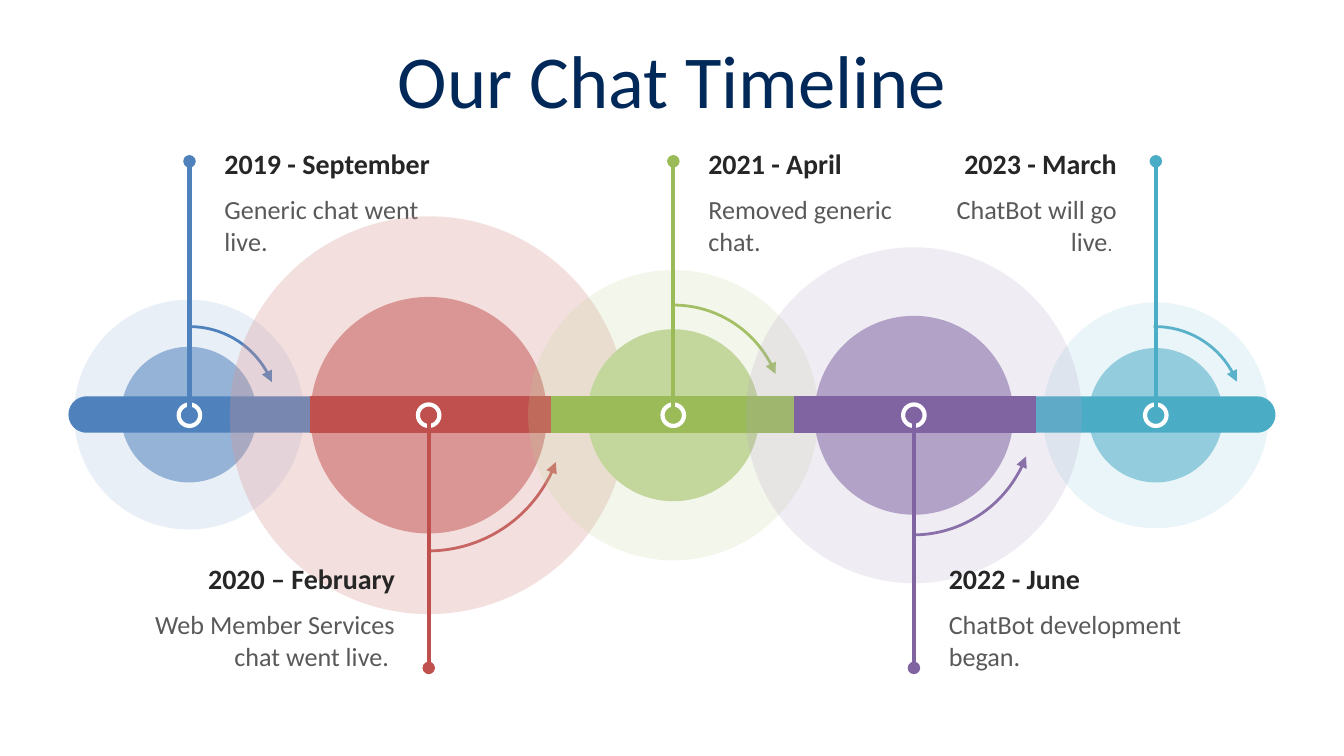
from dataclasses import dataclass, field
from math import cos, pi, sin

from lxml.etree import SubElement
from pptx import Presentation
from pptx.dml.color import RGBColor
from pptx.enum.shapes import MSO_CONNECTOR, MSO_SHAPE
from pptx.enum.text import MSO_ANCHOR, MSO_AUTO_SIZE, PP_ALIGN
from pptx.oxml.ns import qn
from pptx.util import Pt

SCALE = 9144
AXIS = 309
BAR_TOP, BAR_HEIGHT = 295, 27


@dataclass
class Theme:
    """Colours, type styles and line widths of the timeline."""
    white: str = "FFFFFF"
    ring_width: float = 2.25
    stem_width: float = 2.25
    arc_width: float = 1.5
    title: dict = field(default_factory=lambda: {"size": 40, "color": "002859"})
    heading: dict = field(default_factory=lambda: {"size": 15, "color": "262626", "bold": True})
    body: dict = field(default_factory=lambda: {"size": 14, "color": "595959"})
    small: dict = field(default_factory=lambda: {"size": 10.5, "color": "595959"})
    font: str = "Calibri"


@dataclass
class Stage:
    """One milestone on the bar."""
    heading: str
    body: str
    accent: str
    tint: str
    center: int
    halo: int
    disc: int
    arc: int
    bar: tuple
    text_left: int
    text_width: int
    above: bool = True
    align: PP_ALIGN = PP_ALIGN.LEFT
    opacity: int = 20
    round_left: bool = False
    round_right: bool = False
    small_end: str = ""


STAGES = [
    Stage("2019 - September", "Generic chat went live.", "4F81BD", "95B3D7",
          141, 171, 101, 132, (51, 231), 167, 171, round_left=True),
    Stage("2020 – February", "Web Member Services chat went live. ", "C0504D", "D99694",
          319, 296, 176, 203, (231, 410), 107, 187, above=False,
          align=PP_ALIGN.RIGHT, opacity=30),
    Stage("2023 - March", "ChatBot will go live", "4BACC6", "93CDDD",
          860, 168, 100, 131, (771, 949), 690, 141, align=PP_ALIGN.RIGHT,
          round_right=True, small_end=". "),
    Stage("2021 - April", "Removed generic chat.", "9BBB59", "C3D69B",
          501, 216, 128, 164, (410, 591), 527, 141),
    Stage("2022 - June", "ChatBot development began.", "8064A2", "B3A2C7",
          680, 250, 148, 179, (591, 771), 706, 187, above=False),
]


def px(*lengths):
    """Turn px lengths into EMU."""
    return [round(length * SCALE) for length in lengths]


def apply(target, values):
    """Set each attribute of the target from a dict."""
    for name, value in values.items():
        setattr(target, name, value)


class TimelinePage:
    """Draws timeline elements on the current slide."""

    def __init__(self, page, theme):
        self.page = page
        self.theme = theme

    def paint(self, shape, fill=None, line=None, width=0, opacity=100):
        """Fill and outline a shape and drop its shadow."""
        shape.shadow.inherit = False
        if fill:
            shape.fill.solid()
            shape.fill.fore_color.rgb = RGBColor.from_string(fill)
            if opacity < 100:
                color = next(shape._element.spPr.iter(qn("a:srgbClr")))
                SubElement(color, qn("a:alpha"), val=str(opacity * 1000))
        else:
            shape.fill.background()
        if line:
            self.stroke(shape, line, width)
        else:
            shape.line.fill.background()

    def stroke(self, shape, color, width):
        """Give a line its colour and width."""
        shape.line.color.rgb = RGBColor.from_string(color)
        shape.line.width = Pt(width)

    def line_end(self, shape, end, kind):
        """Put an end mark on a line."""
        SubElement(shape._element.spPr.find(qn("a:ln")), qn(f"a:{end}"), type=kind)

    def centered(self, preset, center, size):
        """Add a square preset shape centred on the axis."""
        box = px((2 * center - size) // 2, (2 * AXIS - size) // 2, size, size)
        return self.page.shapes.add_shape(preset, *box)

    def circle(self, center, size, fill, **look):
        """Add a circle on the axis."""
        self.paint(self.centered(MSO_SHAPE.OVAL, center, size), fill, **look)

    def arc(self, stage):
        """Add the curved arrow of a stage."""
        arc = self.centered(MSO_SHAPE.ARC, stage.center, stage.arc)
        angles = (269, 338) if stage.above else (20.4, 90.4)
        for index, angle in enumerate(angles):
            arc.adjustments[index] = angle * 0.6
        self.paint(arc, line=stage.accent, width=self.theme.arc_width)
        self.line_end(arc, "tailEnd" if stage.above else "headEnd", "triangle")

    def bar(self, stage):
        """Add a bar segment, with a half-circle cap where it is an end."""
        left, right = stage.bar
        radius = BAR_HEIGHT / 2
        middle = BAR_TOP + radius
        points = []
        for x, side, rounded in ((right, 1, stage.round_right), (left, -1, stage.round_left)):
            if rounded:
                turns = [pi * step / 24 - pi / 2 for step in range(25)]
                points += [(x + side * radius * (cos(turn) - 1),
                            middle + side * radius * sin(turn)) for turn in turns]
            else:
                points += [(x, middle - side * radius), (x, middle + side * radius)]
        corners = [px(*point) for point in points]
        builder = self.page.shapes.build_freeform(*corners[0], scale=1.0)
        builder.add_line_segments(corners[1:], close=True)
        self.paint(builder.convert_to_shape(), stage.accent)

    def stem(self, stage):
        """Add the line from the axis to the dot."""
        start, end = (310, 120) if stage.above else (307, 497)
        stem = self.page.shapes.add_connector(
            MSO_CONNECTOR.STRAIGHT, *px(stage.center, start, stage.center, end))
        self.stroke(stem, stage.accent, self.theme.stem_width)
        self.line_end(stem, "tailEnd", "oval")
        SubElement(stem._element.spPr, qn("a:effectLst"))

    def fill_text(self, frame, spans, align):
        """Put one paragraph of styled spans into a frame."""
        para = frame.paragraphs[0]
        para.alignment = align
        for text, style in spans:
            span = para.add_run()
            span.text = text
            span.font.color.rgb = RGBColor.from_string(style["color"])
            apply(span.font, {"name": self.theme.font, "size": Pt(style["size"]),
                              "bold": style.get("bold", False)})

    def label(self, box, spans, align, anchor):
        """Add a text box without insets."""
        frame = self.page.shapes.add_textbox(*px(*box)).text_frame
        apply(frame, {"word_wrap": True, "vertical_anchor": anchor, "margin_left": 0,
                      "margin_right": 0, "margin_top": 0, "margin_bottom": 0})
        self.fill_text(frame, spans, align)

    def title(self, text):
        """Place and fill the slide title."""
        title = self.page.shapes.title
        left, top, width, height = px(50, 23, 900, 71)
        apply(title, {"left": left, "top": top, "width": width, "height": height})
        apply(title.text_frame, {"vertical_anchor": MSO_ANCHOR.MIDDLE,
                                 "auto_size": MSO_AUTO_SIZE.NONE})
        self.fill_text(title.text_frame, [(text, self.theme.title)], PP_ALIGN.CENTER)

    def stage(self, stage):
        """Add the circles, bar, stem and texts of a stage."""
        theme = self.theme
        self.circle(stage.center, stage.halo, stage.tint, opacity=stage.opacity)
        self.circle(stage.center, stage.disc, stage.tint)
        self.bar(stage)
        self.circle(stage.center, 16, stage.accent, line=theme.white, width=theme.ring_width)
        self.stem(stage)
        top = 109 if stage.above else 418
        spans = [(stage.body, theme.body)]
        if stage.small_end:
            spans.append((stage.small_end, theme.small))
        self.label((stage.text_left, top + 35, stage.text_width, 47),
                   spans, stage.align, MSO_ANCHOR.TOP)
        self.label((stage.text_left, top, stage.text_width, 25),
                   [(stage.heading, theme.heading)], stage.align, MSO_ANCHOR.BOTTOM)


def main():
    """Build the timeline deck."""
    deck = Presentation()
    deck.slide_width, deck.slide_height = px(1000, 562.5)
    timeline = TimelinePage(deck.slides.add_slide(deck.slide_layouts[5]), Theme())
    timeline.title("Our Chat Timeline")
    first, *later = STAGES
    for stage in later:
        timeline.arc(stage)
    timeline.stage(first)
    timeline.arc(first)
    for stage in later:
        timeline.stage(stage)
    deck.save("out.pptx")


if __name__ == "__main__":
    main()
